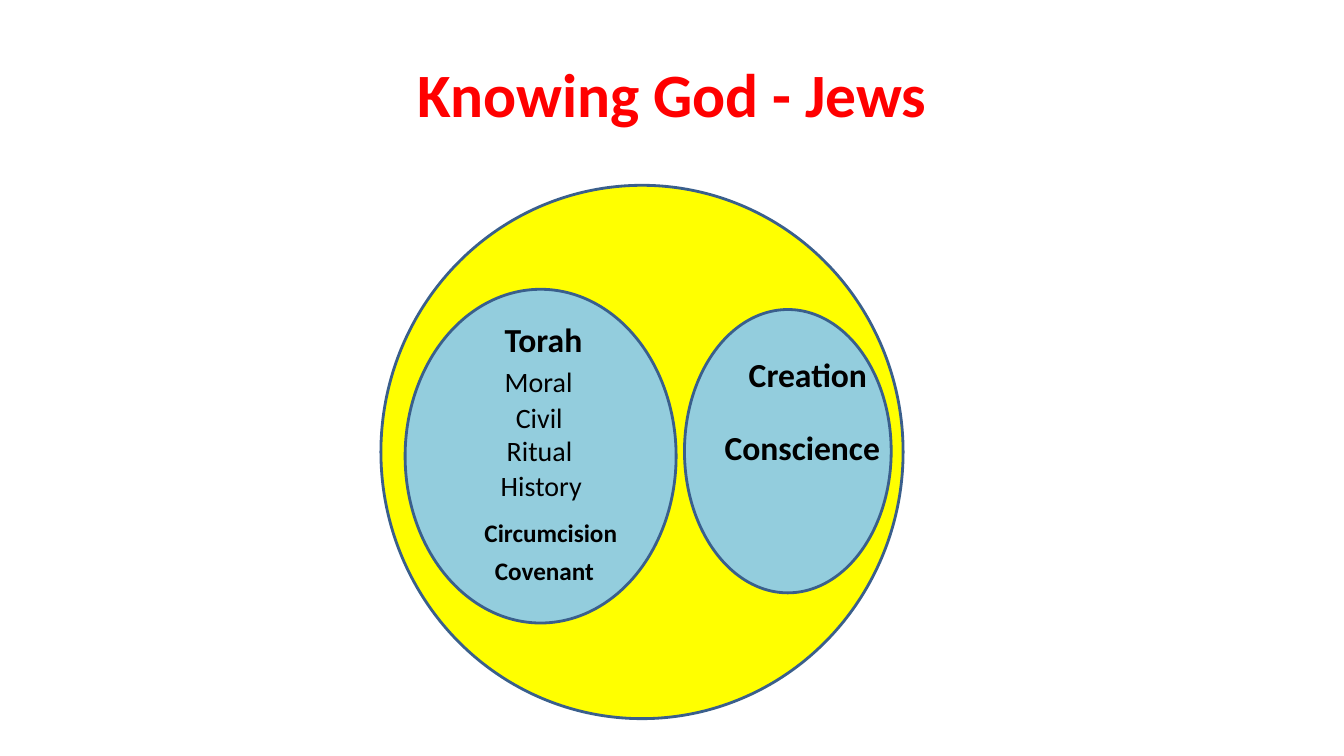
from dataclasses import dataclass

from pptx import Presentation
from pptx.dml.color import RGBColor
from pptx.enum.shapes import MSO_SHAPE as Shape
from pptx.enum.text import MSO_ANCHOR as Anchor, PP_ALIGN as Align
from pptx.util import Cm, Pt


@dataclass(frozen=True)
class Theme:
    font: str = "Calibri"
    title_color: RGBColor = RGBColor(0xFF, 0x00, 0x00)
    text_color: RGBColor = RGBColor(0x00, 0x00, 0x00)
    outer_fill: RGBColor = RGBColor(0xFF, 0xFF, 0x00)
    inner_fill: RGBColor = RGBColor(0x93, 0xCD, 0xDD)
    outline: RGBColor = RGBColor(0x3A, 0x5F, 0x8C)
    outline_width: Pt = Pt(2)
    title_size: Pt = Pt(44)
    heading_size: Pt = Pt(24)
    item_size: Pt = Pt(20)
    note_size: Pt = Pt(18)


THEME = Theme()
TITLE = {"size": THEME.title_size, "bold": True}
HEADING = {"size": THEME.heading_size, "bold": True}
ITEM = {"size": THEME.item_size, "bold": False}
NOTE = {"size": THEME.note_size, "bold": True}

# Fill, then left, top, width, height in centimetres
ELLIPSES = [
    (THEME.outer_fill, (9.6, 4.67, 13.16, 13.44)),
    (THEME.inner_fill, (10.21, 7.29, 6.83, 8.41)),
    (THEME.inner_fill, (17.25, 7.8, 5.21, 7.14)),
]

LABELS = [
    ("Torah", HEADING, (12.47, 7.9, 2.59, 1.27)),
    ("Moral", ITEM, (12.47, 9.07, 2.24, 1.12)),
    ("Civil", ITEM, (12.75, 9.96, 2.41, 1.12)),
    ("Ritual", ITEM, (12.52, 10.8, 2.51, 1.12)),
    ("History", ITEM, (12.37, 11.68, 3.12, 1.12)),
    ("Circumcision", NOTE, (11.96, 12.9, 4.34, 1.02)),
    ("Covenant", NOTE, (12.22, 13.87, 3.84, 1.02)),
    ("Creation", HEADING, (18.62, 8.79, 3.61, 1.27)),
    ("Conscience", HEADING, (18.01, 10.64, 5.21, 1.3)),
]


def add_ellipse(slide, fill, box):
    ellipse = slide.shapes.add_shape(Shape.OVAL, *map(Cm, box))
    ellipse.shadow.inherit = False
    ellipse.fill.solid()
    ellipse.fill.fore_color.rgb = fill
    ellipse.line.color.rgb = THEME.outline
    ellipse.line.width = THEME.outline_width


def add_label(slide, text, style, box, color=THEME.text_color,
              align=Align.LEFT, anchor=Anchor.TOP):
    frame = slide.shapes.add_textbox(*map(Cm, box)).text_frame
    frame.word_wrap = True
    frame.vertical_anchor = anchor
    paragraph = frame.paragraphs[0]
    paragraph.alignment = align
    run = paragraph.add_run()
    run.text = text
    for name, value in {"name": THEME.font, **style}.items():
        setattr(run.font, name, value)
    run.font.color.rgb = color


def main():
    presentation = Presentation()
    presentation.slide_width = Cm(33.87)
    presentation.slide_height = Cm(19.05)
    slide = presentation.slides.add_slide(presentation.slide_layouts[6])

    add_label(slide, "Knowing God - Jews", TITLE, (1.7, 0.76, 30.48, 3.18),
              THEME.title_color, Align.CENTER, Anchor.MIDDLE)
    for fill, box in ELLIPSES:
        add_ellipse(slide, fill, box)
    for text, style, box in LABELS:
        add_label(slide, text, style, box)

    presentation.save("out.pptx")


if __name__ == "__main__":
    main()
